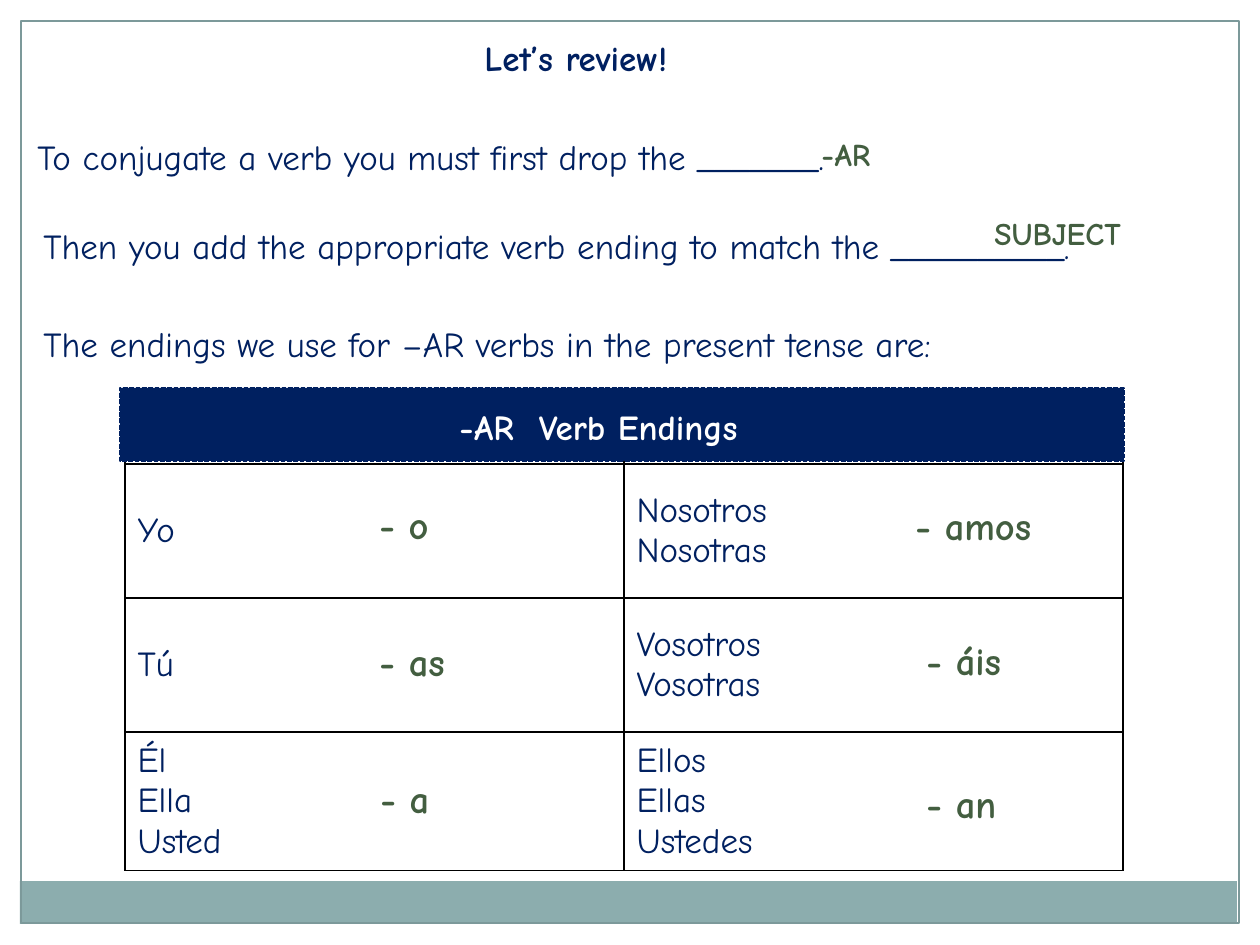
from lxml import etree
from pptx import Presentation
from pptx.dml.color import RGBColor
from pptx.enum.dml import MSO_LINE
from pptx.enum.shapes import MSO_SHAPE
from pptx.enum.text import MSO_ANCHOR, MSO_AUTO_SIZE
from pptx.oxml.ns import qn
from pptx.util import Emu, Pt

EMU_PER_PX = 914400 / 126
FONT = "Comic Neue"
COLORS = {
    "navy": "002060",
    "green": "435E40",
    "white": "FFFFFF",
    "black": "000000",
    "band": "8CADAE",
    "frame": "7C999A",
}

# Each text: wording, (left, top, width, height)
STATEMENTS = [
    ("To conjugate a verb you must first drop the _______.", (25, 129, 917, 55)),
    ("Then you add the appropriate verb ending to match the __________.", (31, 218, 1171, 55)),
    ("The endings we use for –AR verbs in the present tense are:", (31, 316, 1005, 55)),
]
ANSWERS = [
    ("-AR", (809, 129, 95, 50)),
    ("SUBJECT", (982, 208, 224, 50)),
]
VERB_ENDINGS = [
    ("- o", (367, 495, 87, 59)),
    ("- as", (367, 632, 107, 59)),
    ("- a", (368, 769, 87, 59)),
    ("- amos", (903, 496, 158, 59)),
    ("- áis", (914, 631, 117, 59)),
    ("- an", (914, 774, 108, 59)),
]
PRONOUNS = [
    ("Yo", "Nosotros\nNosotras"),
    ("Tú", "Vosotros\nVosotras"),
    ("Él\nElla\nUsted", "Ellos\nEllas\nUstedes"),
]


def px(length):
    return Emu(round(length * EMU_PER_PX))


def rgb(name):
    return RGBColor.from_string(COLORS[name])


def format_text(text_frame, size, color, bold=False):
    for paragraph in text_frame.paragraphs:
        for run in paragraph.runs:
            run.font.name = FONT
            run.font.size = Pt(size)
            run.font.bold = bold
            run.font.color.rgb = rgb(color)


def add_text(slide, text, box, size, color, bold=False, wrap=False):
    shape = slide.shapes.add_textbox(*map(px, box))
    text_frame = shape.text_frame
    text_frame.text = text
    text_frame.word_wrap = wrap
    text_frame.auto_size = MSO_AUTO_SIZE.SHAPE_TO_FIT_TEXT
    format_text(text_frame, size, color, bold)


def add_rectangle(slide, box, fill=None, line=None, width=0.75, dash=None):
    shape = slide.shapes.add_shape(MSO_SHAPE.RECTANGLE, *map(px, box))
    shape.shadow.inherit = False
    if fill:
        shape.fill.solid()
        shape.fill.fore_color.rgb = rgb(fill)
    else:
        shape.fill.background()
    if line:
        shape.line.color.rgb = rgb(line)
        shape.line.width = Pt(width)
        if dash:
            shape.line.dash_style = dash
    else:
        shape.line.fill.background()


def set_borders(cell, color, width):
    properties = cell._tc.get_or_add_tcPr()
    for position, side in enumerate(("a:lnL", "a:lnR", "a:lnT", "a:lnB")):
        border = etree.Element(qn(side), w=str(Pt(width)))
        fill = etree.SubElement(border, qn("a:solidFill"))
        etree.SubElement(fill, qn("a:srgbClr"), val=COLORS[color])
        properties.insert(position, border)


def add_pronoun_table(slide, left, top, column_width, header_height, row_height):
    row_heights = [header_height] + [row_height] * len(PRONOUNS)
    table = slide.shapes.add_table(
        len(row_heights), 2, px(left), px(top), px(2 * column_width), px(sum(row_heights))
    ).table
    table.first_row = False
    table.horz_banding = False
    for column in table.columns:
        column.width = px(column_width)
    for row, height in zip(table.rows, row_heights):
        row.height = px(height)
    # The header row stays empty beneath the heading bar
    for row, texts in zip(table.rows, [("", "")] + PRONOUNS):
        for cell, text in zip(row.cells, texts):
            cell.text_frame.text = text
            cell.vertical_anchor = MSO_ANCHOR.MIDDLE
            cell.fill.background()
            format_text(cell.text_frame, 20, "navy")
            set_borders(cell, "black", 1)


def main():
    presentation = Presentation()
    presentation.slide_width = px(1260)
    presentation.slide_height = px(945)
    slide = presentation.slides.add_slide(presentation.slide_layouts[6])

    # Bottom band and slide frame
    add_rectangle(slide, (20, 881, 1217, 43), fill="band")
    add_rectangle(slide, (21, 21, 1218, 902), line="frame")

    # Title and review statements
    add_text(slide, "Let’s review!", (472, 30, 237, 55), 20, "navy", bold=True)
    for text, box in STATEMENTS:
        add_text(slide, text, box, 20, "navy")
    for text, box in ANSWERS:
        add_text(slide, text, box, 18, "green", bold=True, wrap=True)

    # Pronoun table with its verb endings
    add_pronoun_table(slide, 125, 401, 499, 63, 134)
    for text, box in VERB_ENDINGS:
        add_text(slide, text, box, 22, "green", bold=True)

    # Heading bar over the table
    add_rectangle(slide, (120, 388, 1004, 73), "navy", "navy", 0.9, MSO_LINE.SQUARE_DOT)
    add_text(slide, "-AR  Verb Endings", (447, 399, 349, 55), 20, "white", bold=True)

    presentation.save("out.pptx")


if __name__ == "__main__":
    main()
